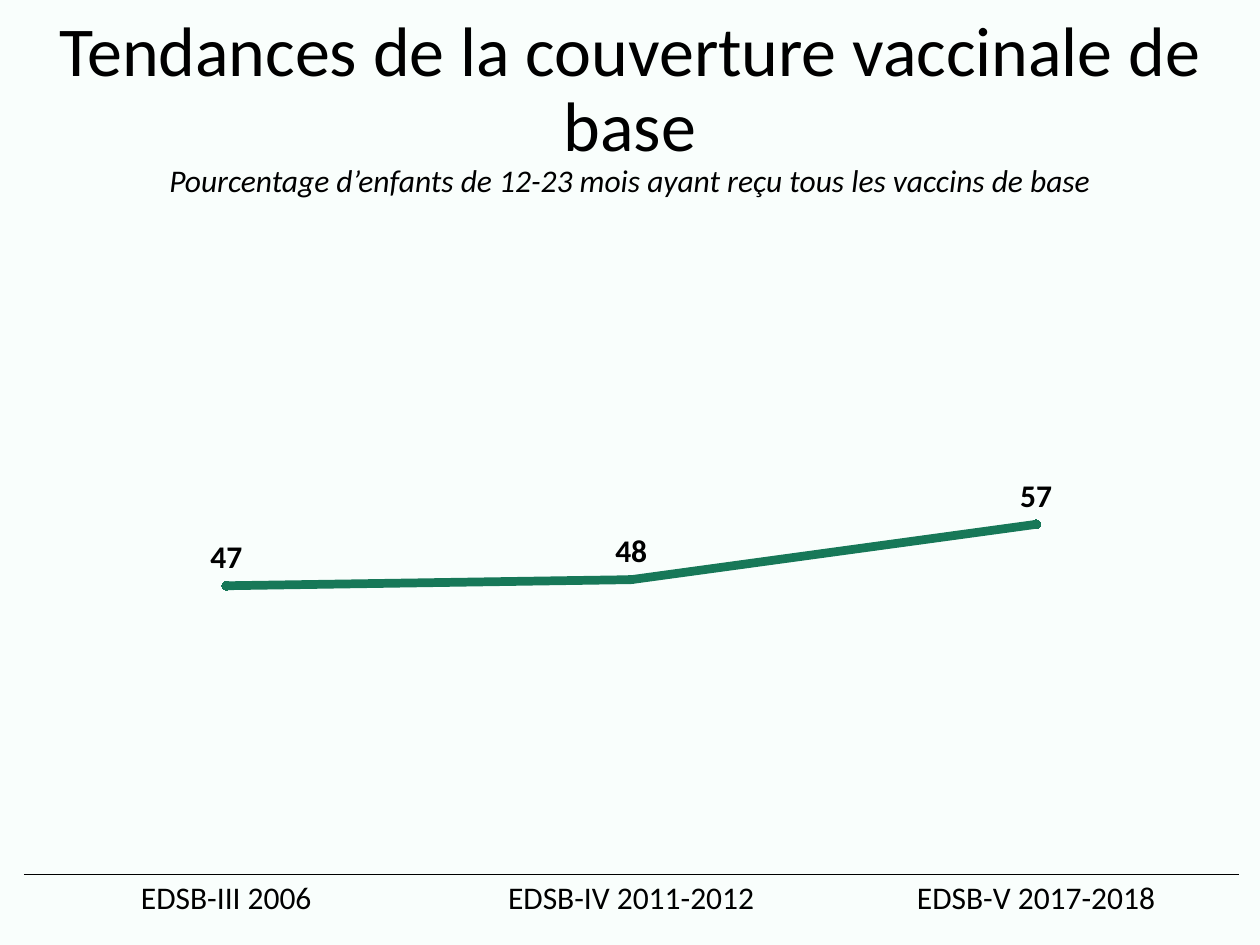
import pptx
import pptx.chart.data
import pptx.dml.color
import pptx.enum.chart
import pptx.enum.text
import pptx.oxml
import pptx.oxml.ns
import pptx.util
from pptx.util import Inches, Pt

FONT = "Calibri"
BLACK = "000000"
GREEN = "177858"
BACKGROUND = "F9FEFC"

TITLE = "Tendances de la couverture vaccinale de base"
SUBTITLE = "Pourcentage d’enfants de 12-23 mois ayant reçu tous les vaccins de base"
COVERAGE = [("EDSB-III 2006", 47), ("EDSB-IV 2011-2012", 48), ("EDSB-V 2017-2018", 57)]
PLOT_AREA = {"x": 0.017, "y": 0.053, "w": 0.966, "h": 0.85}


def color(hex_string):
    return pptx.dml.color.RGBColor.from_string(hex_string)


def fill_solid(fill, hex_string):
    fill.solid()
    fill.fore_color.rgb = color(hex_string)


def style_font(font, size, bold=False, italic=False):
    font.name = FONT
    font.size = Pt(size)
    font.bold = bold
    font.italic = italic
    font.color.rgb = color(BLACK)


def add_heading(slide, text, top, height, size, anchor, spacing=1.0, italic=False):
    shape = slide.shapes.add_textbox(0, Inches(top), Inches(10), Inches(height))
    frame = shape.text_frame
    frame.word_wrap = True
    frame.vertical_anchor = anchor
    paragraph = frame.paragraphs[0]
    paragraph.alignment = pptx.enum.text.PP_ALIGN.CENTER
    paragraph.line_spacing = spacing
    run = paragraph.add_run()
    run.text = text
    style_font(run.font, size, italic=italic)


def set_plot_area(chart, area):
    """Fix the inner plot area, given as fractions of the chart frame."""
    plot_area = chart._chartSpace.chart.plotArea
    for layout in plot_area.findall(pptx.oxml.ns.qn("c:layout")):
        plot_area.remove(layout)
    modes = '<c:layoutTarget val="inner"/><c:xMode val="edge"/><c:yMode val="edge"/>'
    sizes = "".join(f'<c:{key} val="{value}"/>' for key, value in area.items())
    plot_area.insert(0, pptx.oxml.parse_xml(
        f'<c:layout {pptx.oxml.ns.nsdecls("c")}>'
        f"<c:manualLayout>{modes}{sizes}</c:manualLayout></c:layout>"))


def add_coverage_chart(slide):
    data = pptx.chart.data.CategoryChartData()
    data.categories = [survey for survey, _ in COVERAGE]
    data.add_series("Series 1", [percent for _, percent in COVERAGE])
    chart = slide.shapes.add_chart(
        pptx.enum.chart.XL_CHART_TYPE.LINE_MARKERS,
        Inches(0.02), Inches(1.76), Inches(9.98), Inches(5.74), data).chart
    chart.has_legend = False
    chart.has_title = False
    style_font(chart.font, 10)
    set_plot_area(chart, PLOT_AREA)

    value_axis = chart.value_axis
    value_axis.minimum_scale = 0
    value_axis.maximum_scale = 100
    value_axis.has_major_gridlines = False
    value_axis.visible = False

    category_axis = chart.category_axis
    category_axis.major_tick_mark = pptx.enum.chart.XL_TICK_MARK.NONE
    category_axis.format.line.width = Pt(0.75)
    fill_solid(category_axis.format.line.fill, BLACK)
    style_font(category_axis.tick_labels.font, 18)

    series = chart.plots[0].series[0]
    series.smooth = False
    series.format.line.width = Pt(5)
    fill_solid(series.format.line.fill, GREEN)
    series.marker.style = pptx.enum.chart.XL_MARKER_STYLE.CIRCLE
    series.marker.size = 5
    fill_solid(series.marker.format.fill, GREEN)
    fill_solid(series.marker.format.line.fill, GREEN)

    labels = series.data_labels
    labels.show_value = True
    labels.position = pptx.enum.chart.XL_LABEL_POSITION.ABOVE
    style_font(labels.font, 18, bold=True)


def main():
    presentation = pptx.Presentation()
    presentation.slide_width = Inches(10)
    presentation.slide_height = Inches(7.5)
    slide = presentation.slides.add_slide(presentation.slide_layouts[6])
    fill_solid(slide.background.fill, BACKGROUND)

    anchors = pptx.enum.text.MSO_ANCHOR
    add_heading(slide, TITLE, 0, 1.45, 40, anchors.MIDDLE, spacing=0.9)
    add_coverage_chart(slide)
    add_heading(slide, SUBTITLE, 1.23, 0.4, 18, anchors.TOP, italic=True)
    presentation.save("out.pptx")


if __name__ == "__main__":
    main()
